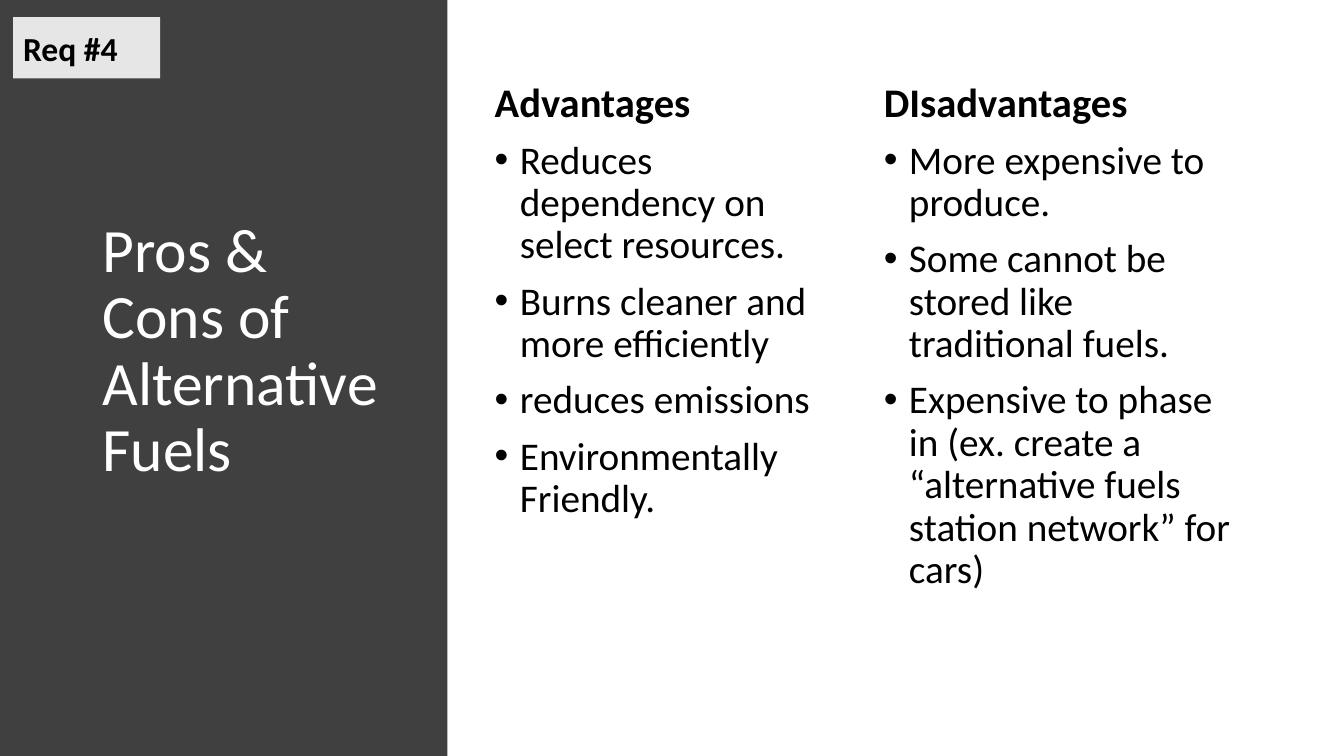
from dataclasses import dataclass

from lxml.etree import SubElement
from pptx import Presentation
from pptx.dml.color import RGBColor as RGB
from pptx.enum.shapes import MSO_SHAPE as Shape
from pptx.enum.text import MSO_ANCHOR as Anchor, MSO_AUTO_SIZE as AutoSize, PP_ALIGN as Align
from pptx.oxml.ns import qn
from pptx.util import Pt


@dataclass(frozen=True)
class Theme:
    font: str = "Calibri"
    band: RGB = RGB(0x40, 0x40, 0x40)
    tag: RGB = RGB(0xE7, 0xE6, 0xE6)
    light: RGB = RGB(0xFF, 0xFF, 0xFF)
    dark: RGB = RGB(0, 0, 0)
    title_size: int = 44
    heading_size: int = 29
    point_size: int = 28
    tag_size: int = 24


THEME = Theme()
INSET_X, INSET_Y = 7.2, 3.6
INDENT = 18
LINE_SPACING = 0.9

COLUMNS = [
    ("Advantages", [
        "Reduces dependency on select resources.",
        "Burns cleaner and more efficiently",
        "reduces emissions",
        "Environmentally Friendly.",
    ]),
    ("DIsadvantages", [
        "More expensive to produce.",
        "Some cannot be stored like traditional fuels.",
        "Expensive to phase in (ex. create a “alternative fuels station network” for cars)",
    ]),
]


def style(paragraph, size, color, bold=False):
    paragraph.alignment = Align.LEFT
    font = paragraph.font
    font.name, font.size, font.bold = THEME.font, Pt(size), bold
    font.color.rgb = color


def frame_text(frame, anchor, inset_x=INSET_X, inset_y=INSET_Y):
    frame.word_wrap = True
    frame.auto_size = AutoSize.NONE
    frame.vertical_anchor = anchor
    frame.margin_left = frame.margin_right = Pt(inset_x)
    frame.margin_top = frame.margin_bottom = Pt(inset_y)


def add_panel(slide, left, top, width, height, color):
    panel = slide.shapes.add_shape(Shape.RECTANGLE, Pt(left), Pt(top), Pt(width), Pt(height))
    panel.shadow.inherit = False
    panel.fill.solid()
    panel.fill.fore_color.rgb = color
    panel.line.fill.background()
    return panel


def add_title_band(slide, left, top, width, height):
    band = add_panel(slide, left, top, width, height, THEME.band)
    slide.shapes._spTree.insert(2, band._element)
    title = slide.shapes.title
    title.left, title.top = Pt(left + 66), Pt(top + 28.8)
    title.width, title.height = Pt(220.3), Pt(445)
    frame_text(title.text_frame, Anchor.MIDDLE)
    title.text_frame.text = "Pros & Cons of Alternative Fuels"
    heading = title.text_frame.paragraphs[0]
    style(heading, THEME.title_size, THEME.light)
    heading.line_spacing = LINE_SPACING


def make_bullet(paragraph):
    properties = paragraph._p.get_or_add_pPr()
    properties.set("marL", str(Pt(INDENT)))
    properties.set("indent", str(-Pt(INDENT)))
    SubElement(properties, qn("a:buFont"), typeface="Arial")
    SubElement(properties, qn("a:buChar"), char="•")


def add_column(slide, left, top, width, height, heading, points):
    column = slide.shapes.add_textbox(Pt(left), Pt(top), Pt(width), Pt(height))
    frame = column.text_frame
    frame_text(frame, Anchor.TOP)
    first = frame.paragraphs[0]
    first.text = heading
    first.line_spacing = LINE_SPACING
    style(first, THEME.heading_size, THEME.dark, bold=True)
    for point in points:
        item = frame.add_paragraph()
        item.text = point
        item.line_spacing = LINE_SPACING
        item.space_before = Pt(10)
        style(item, THEME.point_size, THEME.dark)
        make_bullet(item)


def add_comparison(slide, left, top, width, height, gap):
    column_width = (width - gap) / len(COLUMNS)
    for index, (heading, points) in enumerate(COLUMNS):
        column_left = left + index * (column_width + gap)
        add_column(slide, column_left, top, column_width, height, heading, points)


def add_requirement_tag(slide, left, top, width, height):
    tag = add_panel(slide, left, top, width, height, THEME.tag)
    frame_text(tag.text_frame, Anchor.MIDDLE, INSET_X, INSET_X)
    tag.text_frame.text = "Req #4"
    style(tag.text_frame.paragraphs[0], THEME.tag_size, THEME.dark, bold=True)


def main():
    deck = Presentation()
    deck.slide_width, deck.slide_height = Pt(960), Pt(540)
    slide = deck.slides.add_slide(deck.slide_layouts[5])
    add_title_band(slide, 0, 0, 319.7, 540)
    add_comparison(slide, 346.3, 55.4, 547.9, 430.6, gap=7.9)
    add_requirement_tag(slide, 9.4, 12.2, 105.1, 43.9)
    deck.save("out.pptx")


if __name__ == "__main__":
    main()
